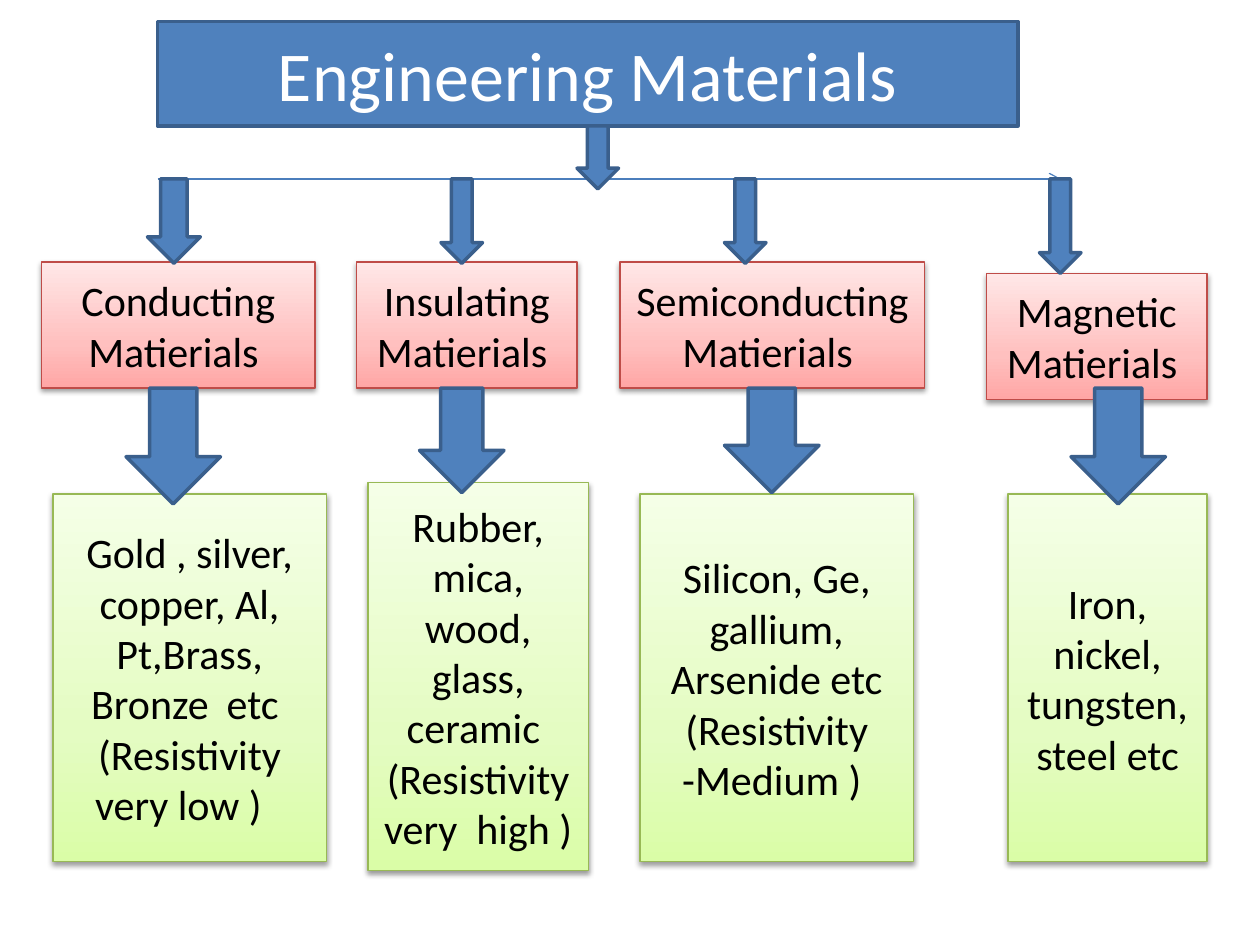
from lxml import etree
from pptx import Presentation
from pptx.dml.color import RGBColor
from pptx.enum import shapes, text
from pptx.oxml.ns import qn
from pptx.util import Inches, Pt

HUES = {
    "blue": "4F81BD", "edge": "3A5F8C", "rule": "4B7EBC",
    "red": "BF4C48", "green": "98B955",
    "white": "FFFFFF", "black": "000000",
}
FADES = {
    "red": ((0, "FFA6A5"), (35, "FFC0BF"), (100, "FFE7E7")),
    "green": ((0, "DAFDA7"), (35, "E4FCC2"), (100, "F5FFE7")),
}
KINDS = (
    ("Conducting Matierials ", (0.33, 2.08, 2.17, 1)),
    ("Insulating Matierials ", (2.83, 2.08, 1.75, 1)),
    ("Semiconducting Matierials ", (4.92, 2.08, 2.42, 1)),
    ("Magnetic\nMatierials ", (7.83, 2.17, 1.75, 1)),
)
LISTS = (
    ("Gold , silver, copper, Al, Pt,Brass, Bronze\t etc  (Resistivity very low )\t",
     (0.42, 3.92, 2.17, 2.92)),
    ("Rubber, mica, wood, glass, ceramic  (Resistivity very  high )",
     (2.92, 3.83, 1.75, 3.08)),
    ("Silicon, Ge, gallium, Arsenide etc\n(Resistivity -Medium ) \t",
     (5.08, 3.92, 2.17, 2.92)),
    ("Iron, nickel, tungsten, steel etc", (8, 3.92, 1.58, 2.92)),
)
ARROWS = (
    (1, 3.08, 0.75, 0.92), (3.33, 3.08, 0.67, 0.83),
    (5.75, 3.08, 0.75, 0.83), (8.5, 3.08, 0.75, 0.92),
    (4.58, 1, 0.33, 0.5),
    (1.17, 1.42, 0.42, 0.67), (3.5, 1.42, 0.33, 0.67),
    (5.75, 1.42, 0.33, 0.67), (8.25, 1.42, 0.33, 0.75),
)


def hue(name):
    return RGBColor.from_string(HUES[name])


def node(up, tag, **attrs):
    return etree.SubElement(up, qn(tag), {k: str(v) for k, v in attrs.items()})


class Chart:
    """Draws the material tree on one slide in a shared style."""

    def __init__(self, slide, font="Calibri"):
        self.slide = slide
        self.font = font

    def solid(self, form, at):
        shape = self.slide.shapes.add_shape(form, *map(Inches, at))
        shape.shadow.inherit = False
        shape.fill.solid()
        shape.fill.fore_color.rgb = hue("blue")
        shape.line.color.rgb = hue("edge")
        shape.line.width = Pt(2)
        return shape

    def label(self, shape, words, size, color):
        frame = shape.text_frame
        frame.word_wrap = True
        frame.vertical_anchor = text.MSO_ANCHOR.MIDDLE
        frame.text = words
        for para in frame.paragraphs:
            para.alignment = text.PP_ALIGN.CENTER
            para.font.name = self.font
            para.font.size = Pt(size)
            para.font.color.rgb = hue(color)

    def title(self, words, at):
        self.label(self.solid(shapes.MSO_SHAPE.RECTANGLE, at), words, 40, "white")

    def card(self, words, at, color):
        shape = self.solid(shapes.MSO_SHAPE.RECTANGLE, at)
        shape.line.color.rgb = hue(color)
        shape.line.width = Pt(0.75)
        self.fade(shape, color)
        self.shade(shape)
        self.label(shape, words, 24, "black")

    def fade(self, shape, color):
        shape.fill.gradient()
        shape.fill.gradient_angle = 90
        stops = shape._element.spPr.find(".//" + qn("a:gsLst"))
        stops.clear()
        for spot, code in FADES[color]:
            node(node(stops, "a:gs", pos=spot * 1000), "a:srgbClr", val=code)

    def shade(self, shape):
        effects = shape._element.spPr.find(qn("a:effectLst"))
        cast = node(effects, "a:outerShdw", blurRad=Pt(3.1), dist=Pt(1.6),
                    dir=90 * 60000, rotWithShape=0)
        tint = node(cast, "a:srgbClr", val=HUES["black"])
        node(tint, "a:alpha", val=38000)

    def arrow(self, at):
        self.solid(shapes.MSO_SHAPE.DOWN_ARROW, at)

    def rule(self, left, right, top):
        line = self.slide.shapes.add_connector(
            shapes.MSO_CONNECTOR.STRAIGHT, *map(Inches, (left, top, right, top)))
        line.line.color.rgb = hue("rule")
        line.line.width = Pt(0.75)
        props = line._element.spPr
        node(props.find(qn("a:ln")), "a:tailEnd", type="arrow")
        node(props, "a:effectLst")


def main():
    deck = Presentation()
    deck.slide_width, deck.slide_height = Inches(10), Inches(7.5)
    chart = Chart(deck.slides.add_slide(deck.slide_layouts[6]))
    chart.title("Engineering Materials", (1.25, 0.17, 6.83, 0.83))
    for color, cards in (("red", KINDS), ("green", LISTS)):
        for words, at in cards:
            chart.card(words, at, color)
    chart.rule(1.25, 8.42, 1.42)
    for at in ARROWS:
        chart.arrow(at)
    deck.save("out.pptx")


if __name__ == "__main__":
    main()
